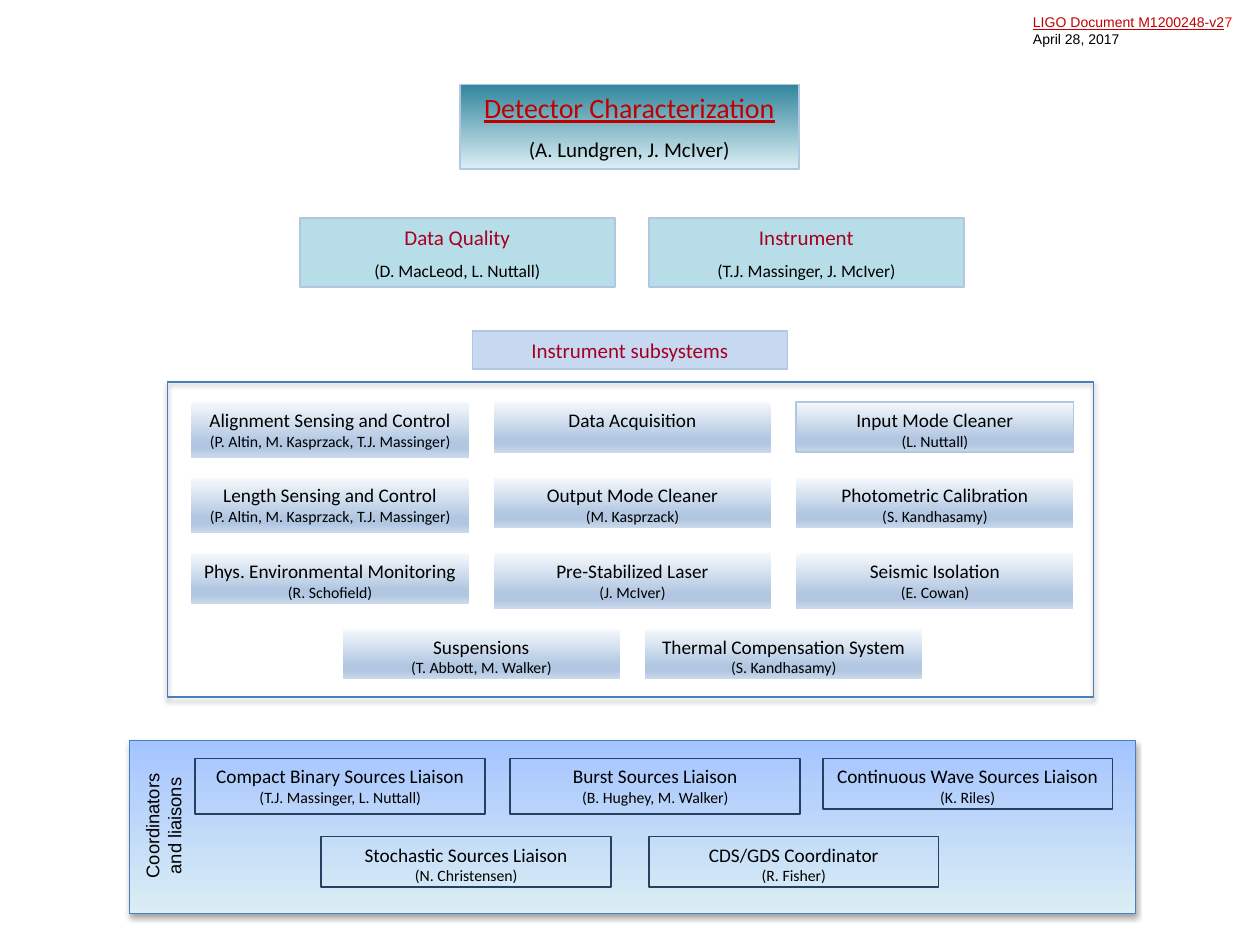
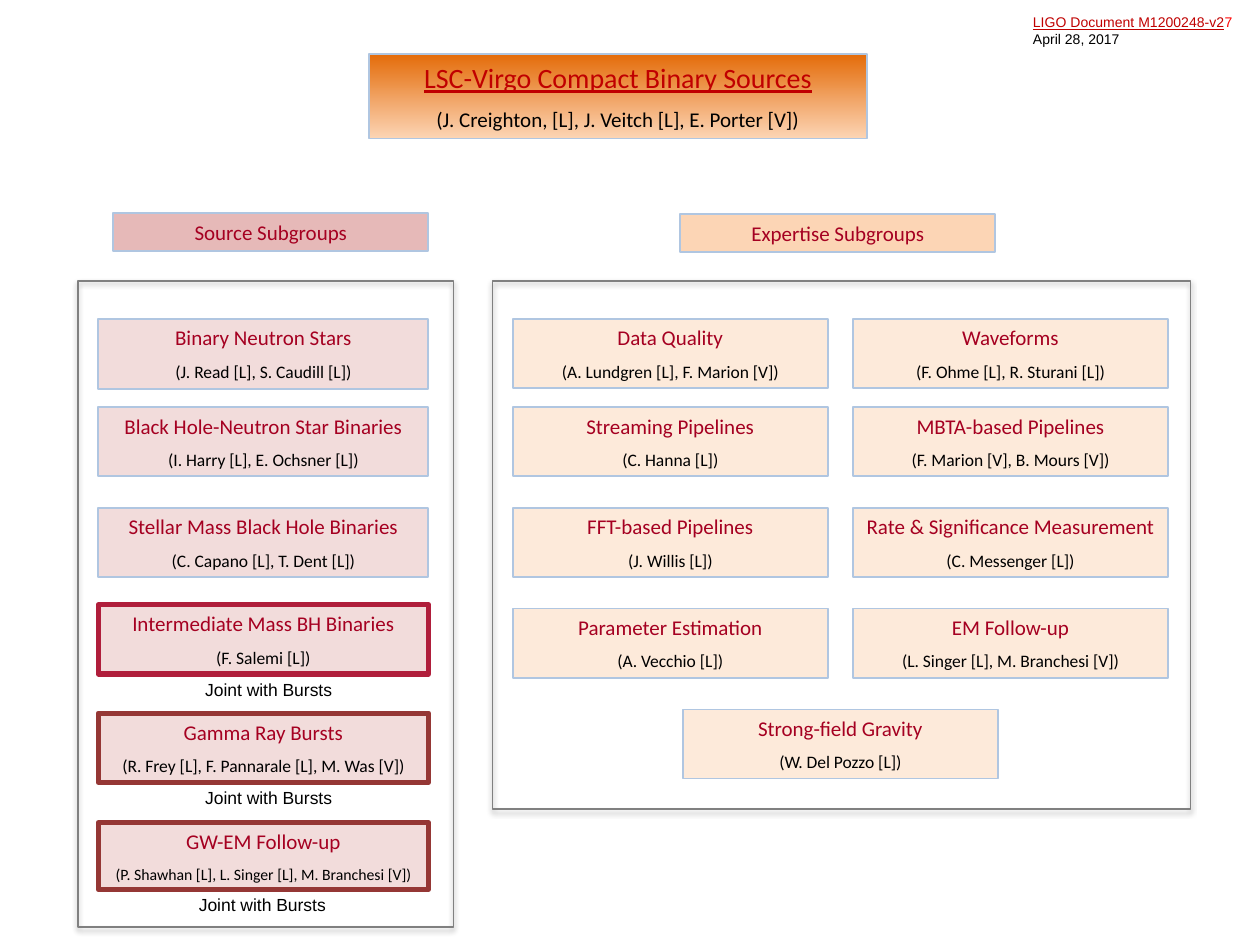
from lxml import etree
from pptx import Presentation
from pptx.dml.color import RGBColor
from pptx.enum.shapes import MSO_SHAPE
from pptx.enum.text import MSO_ANCHOR, MSO_AUTO_SIZE, PP_ALIGN
from pptx.oxml.ns import qn
from pptx.util import Emu, Pt

RECT = MSO_SHAPE.RECTANGLE
TOP = MSO_ANCHOR.TOP
NO_FIT = MSO_AUTO_SIZE.NONE
LEFT, CENTER = PP_ALIGN.LEFT, PP_ALIGN.CENTER

PX = 9144  # 100 px to the inch
TITLE_ONLY = 5

COLORS = {
    "black": "000000",
    "title": "C00000",
    "version": "FF0000",
    "heading": "A50021",
    "edge": "B0C6E1",
    "panel_edge": "4B7EBC",
    "liaison_edge": "254061",
    "frame_gray": "808080",
    "joint_red": "B01E3B",
    "joint_brown": "953735",
    "teal": "B7DEE8",
    "periwinkle": "C6D9F1",
    "rose": "E6B9B8",
    "rose_light": "F2DCDB",
    "peach": "FCD5B5",
    "peach_light": "FDEADA",
}
GRADIENTS = {
    "teal_fade": [(0, "31859C"), (100, "DBEEF4")],
    "orange_fade": [(0, "E46C0A"), (100, "FCD5B5")],
    "subsystem": [(0, "F6F9FC"), (74, "B0C6E1"), (83, "B0C6E1"), (100, "CAD9EB")],
    "liaison_panel": [(0, "A4C4FF"), (100, "DBEEF4")],
}

# name, people, box height
SUBSYSTEMS = [
    [("Alignment Sensing and Control", "(P. Altin, M. Kasprzack, T.J. Massinger)", 44),
     ("Data Acquisition", None, 40),
     ("Input Mode Cleaner", "(L. Nuttall)", 40)],
    [("Length Sensing and Control", "(P. Altin, M. Kasprzack, T.J. Massinger)", 44),
     ("Output Mode Cleaner", "(M. Kasprzack)", 40),
     ("Photometric Calibration", "(S. Kandhasamy)", 40)],
    [("Phys. Environmental Monitoring", "(R. Schofield)", 40),
     ("Pre-Stabilized Laser", "(J. McIver)", 44),
     ("Seismic Isolation", "(E. Cowan)", 44)],
    [("Suspensions", "(T. Abbott, M. Walker)", 40),
     ("Thermal Compensation System", "(S. Kandhasamy)", 40)],
]
# left, top, height, name, people
LIAISONS = [
    (155, 602, 44, "Compact Binary Sources Liaison", "(T.J. Massinger, L. Nuttall)"),
    (405, 602, 44, "Burst Sources Liaison", "(B. Hughey, M. Walker)"),
    (653, 602, 40, "Continuous Wave Sources Liaison", "(K. Riles)"),
    (255, 664, 40, "Stochastic Sources Liaison", "(N. Christensen)"),
    (515, 664, 40, "CDS/GDS Coordinator", "(R. Fisher)"),
]
# top, height, name, people, people size
SOURCES = [
    (253, 56, "Binary Neutron Stars", "(J. Read [L], S. Caudill [L])", 10),
    (323, 55, "Black Hole-Neutron Star Binaries", "(I. Harry [L], E. Ochsner [L])", 10),
    (403, 55, "Stellar Mass Black Hole Binaries", "(C. Capano [L], T. Dent [L])", 10),
]
# top, height, name, people, people size, edge, caption left, caption top
JOINT_SOURCES = [
    (480, 55, "Intermediate Mass BH Binaries", "(F. Salemi [L])", 10,
     "joint_red", 153, 534),
    (566, 55, "Gamma Ray Bursts", "(R. Frey [L], F. Pannarale [L], M. Was [V])", 10,
     "joint_brown", 153, 620),
    (653, 53, "GW-EM Follow-up", "(P. Shawhan [L], L. Singer [L], M. Branchesi [V])", 9,
     "joint_brown", 148, 705),
]
EXPERTISE = [
    (253, [("Data Quality", "(A. Lundgren [L], F. Marion [V])"),
           ("Waveforms", "(F. Ohme [L], R. Sturani [L])")]),
    (323, [("Streaming Pipelines", "(C. Hanna [L])"),
           ("MBTA-based Pipelines", "(F. Marion [V], B. Mours [V])")]),
    (403, [("FFT-based Pipelines", "(J. Willis [L])"),
           ("Rate & Significance Measurement", "(C. Messenger [L])")]),
    (483, [("Parameter Estimation", "(A. Vecchio [L])"),
           ("EM Follow-up", "(L. Singer [L], M. Branchesi [V])")]),
    (563, [("Strong-field Gravity", "(W. Del Pozzo [L])")]),
]


def px(n):
    return Emu(n * PX)


def rgb(name):
    return RGBColor.from_string(COLORS[name])


def paint(sp, fill, edge, width):
    """Set the fill (none, gradient or solid) and the outline."""
    if fill is None:
        sp.fill.background()
    elif fill in GRADIENTS:
        sp.fill.gradient()
        sp.fill.gradient_angle = 270
        stops = sp._element.xpath("./p:spPr/a:gradFill/a:gsLst")[0]
        for gs in list(stops):
            stops.remove(gs)
        for pos, color in GRADIENTS[fill]:
            gs = etree.SubElement(stops, qn("a:gs"), pos=str(pos * 1000))
            etree.SubElement(gs, qn("a:srgbClr"), val=color)
    else:
        sp.fill.solid()
        sp.fill.fore_color.rgb = rgb(fill)
    if edge is None:
        sp.line.fill.background()
    else:
        sp.line.color.rgb = rgb(edge)
        sp.line.width = Pt(width)


def write(sp, lines, font="Calibri", align=CENTER, gap=0, inset=5):
    """Fill a shape with (text, size, colour) lines, gap points apart."""
    tf = sp.text_frame
    tf.word_wrap = True
    tf.auto_size = NO_FIT
    tf.vertical_anchor = TOP
    tf.margin_left = tf.margin_right = px(inset)
    tf.margin_top = tf.margin_bottom = px(5)
    for i, (text, size, color) in enumerate(lines):
        p = tf.paragraphs[0] if i == 0 else tf.add_paragraph()
        p.text = text
        p.alignment = align
        p.space_before = Pt(gap if i else 0)
        p.font.name, p.font.size = font, Pt(size)
        p.font.color.rgb = rgb(color)
    return tf


def add_box(s, x, y, w, h, fill=None, edge=None, width=1):
    sp = s.shapes.add_shape(RECT, px(x), px(y), px(w), px(h))
    sp.shadow.inherit = False
    paint(sp, fill, edge, width)
    return sp


def add_frame(s, x, y, w, h, edge, fill=None, width=1):
    """Add a group panel with a soft shadow below it."""
    sp = add_box(s, x, y, w, h, fill, edge, width)
    effects = sp._element.spPr.find(qn("a:effectLst"))
    shadow = etree.SubElement(effects, qn("a:outerShdw"), blurRad=str(Pt(3.1)),
                              dist=str(Pt(1.8)), dir="5400000", rotWithShape="0")
    color = etree.SubElement(shadow, qn("a:srgbClr"), val=COLORS["black"])
    etree.SubElement(color, qn("a:alpha"), val="35000")


def add_group_box(s, x, y, w, h, fill, name, people=None, size=10, edge="edge", width=1):
    lines = [(name, 12, "heading")]
    if people:
        lines.append((people, size, "black"))
    write(add_box(s, x, y, w, h, fill, edge, width), lines, gap=6)


def add_small_box(s, x, y, w, h, name, people, fill=None, edge=None):
    lines = [(name, 11, "black")]
    if people:
        lines.append((people, 9, "black"))
    write(add_box(s, x, y, w, h, fill, edge), lines)


def add_label(s, x, y, w, h, lines, align=LEFT):
    sp = s.shapes.add_textbox(px(x), px(y), px(w), px(h))
    write(sp, lines, "Arial", align, inset=10)
    return sp


def add_chart_slide(prs, x, y, w, fill, title, chairs):
    """Add a slide with its title box and the document reference."""
    s = prs.slides.add_slide(prs.slide_layouts[TITLE_ONLY])
    sp = s.shapes.title
    sp.left, sp.top, sp.width, sp.height = px(x), px(y), px(w), px(67)
    paint(sp, fill, "edge", 1)
    tf = write(sp, [(title, 16, "title"), (chairs, 12, "black")], gap=7)
    tf.paragraphs[0].font.underline = True

    ref = add_label(s, 810, 6, 184, 37, [("LIGO Document M1200248-v2", 8, "title"),
                                         ("April 28, 2017", 8, "black")])
    p = ref.text_frame.paragraphs[0]
    p.runs[0].font.underline = True
    r = p.add_run()
    r.text = "7"
    r.font.color.rgb = rgb("version")
    return s


def build_detector_slide(prs):
    s = add_chart_slide(prs, 365, 67, 269, "teal_fade",
                        "Detector Characterization", "(A. Lundgren, J. McIver)")
    add_group_box(s, 238, 173, 250, 55, "teal", "Data Quality", "(D. MacLeod, L. Nuttall)")
    add_group_box(s, 515, 173, 250, 55, "teal", "Instrument", "(T.J. Massinger, J. McIver)")
    add_group_box(s, 375, 263, 250, 30, "periwinkle", "Instrument subsystems")

    add_frame(s, 133, 303, 735, 250, "panel_edge")
    for row, boxes in enumerate(SUBSYSTEMS):
        left = 152 + (3 - len(boxes)) * 120
        for col, (name, people, h) in enumerate(boxes):
            edge = "edge" if name == "Input Mode Cleaner" else None
            add_small_box(s, left + col * 240, 319 + row * 60, 220, h,
                          name, people, "subsystem", edge)

    add_frame(s, 103, 588, 798, 137, "panel_edge", "liaison_panel", 0.75)
    for x, y, h, name, people in LIAISONS:
        add_small_box(s, x, y, 230, h, name, people, edge="liaison_edge")
    side = add_label(s, 61, 633, 137, 45, [("Coordinators", 10.5, "black"),
                                           ("and liaisons", 10.5, "black")], CENTER)
    side.rotation = 270


def build_binary_slide(prs):
    s = add_chart_slide(prs, 293, 43, 395, "orange_fade", "LSC-Virgo Compact Binary Sources",
                        "(J. Creighton, [L], J. Veitch [L], E. Porter [V])")
    add_group_box(s, 90, 169, 250, 30, "rose", "Source Subgroups")
    add_group_box(s, 540, 170, 250, 30, "peach", "Expertise Subgroups")

    add_frame(s, 62, 223, 298, 513, "frame_gray")
    for y, h, name, people, size in SOURCES:
        add_group_box(s, 78, y, 262, h, "rose_light", name, people, size)
    for y, h, name, people, size, edge, label_x, label_y in JOINT_SOURCES:
        add_group_box(s, 78, y, 262, h, "rose_light", name, people, size, edge, 3)
        add_label(s, label_x, label_y, 126, 27, [("Joint with Bursts", 10, "black")])

    add_frame(s, 391, 223, 554, 419, "frame_gray")
    for y, boxes in EXPERTISE:
        left = 407 + (2 - len(boxes)) * 135
        for col, (name, people) in enumerate(boxes):
            add_group_box(s, left + col * 270, y, 250, 55, "peach_light", name, people)


def main():
    prs = Presentation()
    prs.slide_width, prs.slide_height = px(1000), px(750)
    build_detector_slide(prs)
    build_binary_slide(prs)
    prs.save("out.pptx")


if __name__ == "__main__":
    main()
